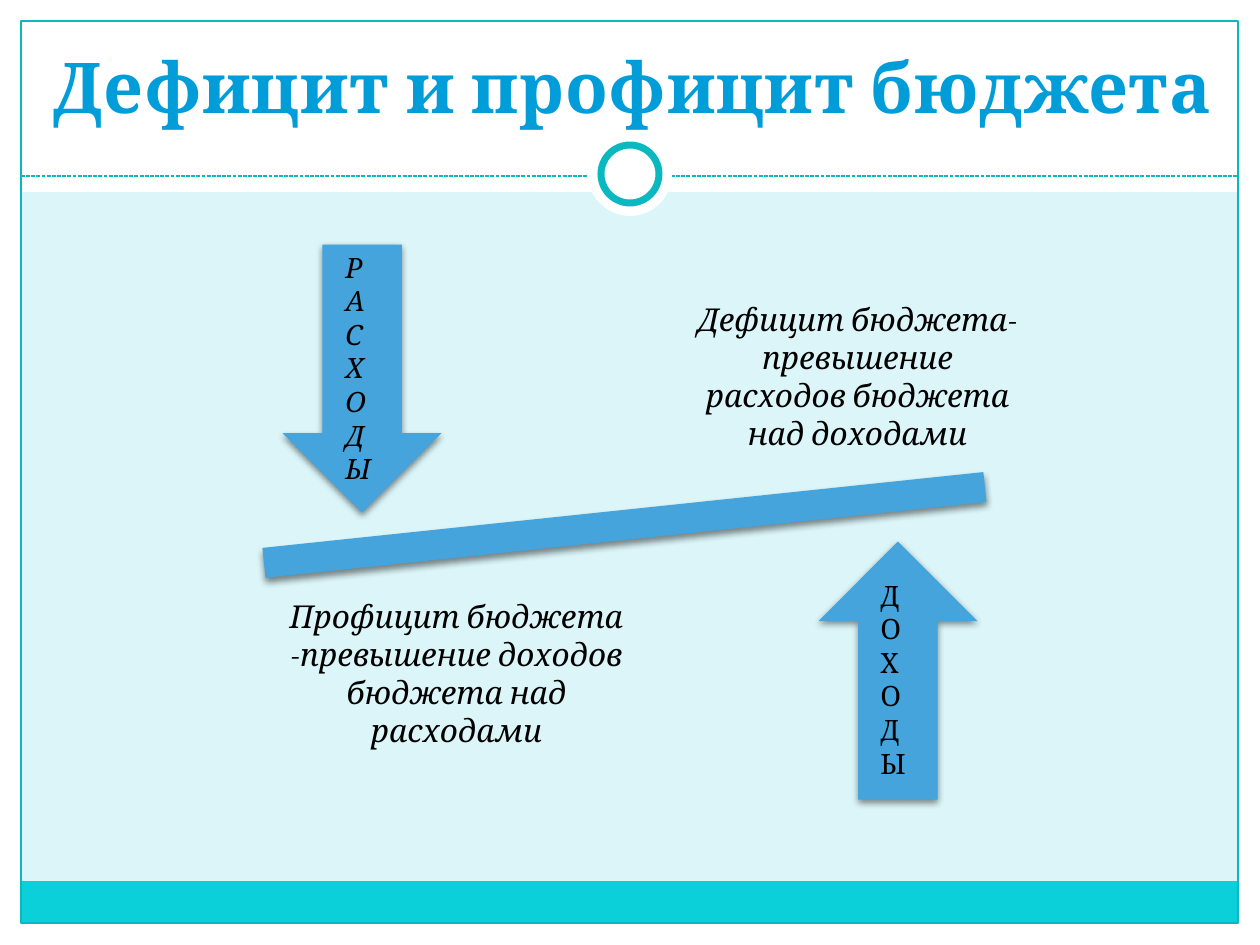
import pptx
import pptx.dml.color
import pptx.enum.dml
import pptx.enum.shapes
import pptx.enum.text
import pptx.oxml
import pptx.oxml.ns
import pptx.util

SHAPES = pptx.enum.shapes.MSO_SHAPE
ALIGN = pptx.enum.text.PP_ALIGN
EMU_PER_PX = 914400 / 126
COLORS = {
    "background": "DBF5F9",
    "white": "FFFFFF",
    "band": "0BD0D9",
    "frame": "0AB8BF",
    "scale": "45A4DB",
    "title": "009DD9",
    "text": "000000",
}
EFFECTS = '<a:effectLst %s>{}</a:effectLst>' % pptx.oxml.ns.nsdecls("a")
SHADOW = (
    '<a:outerShdw blurRad="50800" dist="25400" dir="5400000" rotWithShape="0">'
    '<a:srgbClr val="000000"><a:alpha val="45000"/></a:srgbClr></a:outerShdw>'
)


def px(length):
    return pptx.util.Emu(round(length * EMU_PER_PX))


def rgb(name):
    return pptx.dml.color.RGBColor.from_string(COLORS[name])


class SlideBuilder:
    font = "Cambria"

    def __init__(self, slide):
        self.slide = slide
        slide.background.fill.solid()
        slide.background.fill.fore_color.rgb = rgb("background")

    def shape(self, kind, box, fill=None, line=None, width=0.75, rotation=0, shadow=False):
        shape = self.slide.shapes.add_shape(kind, *map(px, box))
        shape.rotation = rotation
        if fill:
            shape.fill.solid()
            shape.fill.fore_color.rgb = rgb(fill)
        else:
            shape.fill.background()
        if line:
            shape.line.color.rgb = rgb(line)
            shape.line.width = pptx.util.Pt(width)
        else:
            shape.line.fill.background()
        if shadow:
            shape._element.spPr.append(pptx.oxml.parse_xml(EFFECTS.format(SHADOW)))
        else:
            shape.shadow.inherit = False
        return shape

    def dashed_line(self, start, end, color):
        line = self.slide.shapes.add_connector(
            pptx.enum.shapes.MSO_CONNECTOR.STRAIGHT, *map(px, start + end))
        line.line.color.rgb = rgb(color)
        line.line.width = pptx.util.Pt(0.75)
        line.line.dash_style = pptx.enum.dml.MSO_LINE.SQUARE_DOT
        line._element.spPr.append(pptx.oxml.parse_xml(EFFECTS.format("")))

    def text(self, box, paragraphs, size, align=ALIGN.LEFT, color="text",
             bold=False, italic=False, wrap=True, spacing=None):
        frame = self.slide.shapes.add_textbox(*map(px, box)).text_frame
        frame.word_wrap = wrap
        frame.auto_size = pptx.enum.text.MSO_AUTO_SIZE.SHAPE_TO_FIT_TEXT
        for index, content in enumerate(paragraphs):
            paragraph = frame.add_paragraph() if index else frame.paragraphs[0]
            paragraph.alignment = align
            run = paragraph.add_run()
            run.text = content
            run.font.name = self.font
            run.font.size = pptx.util.Pt(size)
            run.font.bold = bold
            run.font.italic = italic
            run.font.color.rgb = rgb(color)
            if spacing:
                run.font._element.set("spc", str(spacing))


def main():
    deck = pptx.Presentation()
    deck.slide_width, deck.slide_height = px(1260), px(945)
    builder = SlideBuilder(deck.slides.add_slide(deck.slide_layouts[6]))

    for margin in [(0, 924, 1260, 21), (0, 0, 1260, 192),
                   (0, 0, 21, 945), (1239, 0, 21, 945)]:
        builder.shape(SHAPES.RECTANGLE, margin, "white")
    builder.shape(SHAPES.RECTANGLE, (21, 881, 1217, 43), "band")
    builder.shape(SHAPES.RECTANGLE, (21, 21, 1217, 902), line="frame")
    builder.dashed_line((21, 176), (1239, 176), "frame")
    builder.shape(SHAPES.OVAL, (588, 132, 84, 84), "white")
    builder.shape(SHAPES.OVAL, (601, 145, 58, 58), "white", "frame", 4)

    for kind, box, rotation in [
        (SHAPES.RECTANGLE, (262, 510, 725, 30), 354),
        (SHAPES.RIGHT_ARROW, (228, 299, 268, 159), 90),
        (SHAPES.RIGHT_ARROW, (769, 591, 258, 159), 270),
    ]:
        builder.shape(kind, box, "scale", rotation=rotation, shadow=True)

    for box, definition in [
        ((679, 294, 357, 165), "Дефицит бюджета- превышение расходов бюджета над доходами"),
        ((273, 591, 367, 165), "Профицит бюджета -превышение доходов бюджета над расходами"),
    ]:
        builder.text(box, [definition], 18, ALIGN.CENTER, italic=True)

    builder.text((333, 244, 30, 285), "РАСХОДЫ", 16, italic=True)
    builder.text((868, 572, 59, 251), "ДОХОДЫ", 16)
    builder.text((-10, 37, 1270, 97), [" Дефицит и профицит бюджета"], 40, ALIGN.CENTER,
                 "title", bold=True, wrap=False, spacing=50)

    deck.save("out.pptx")


if __name__ == "__main__":
    main()
